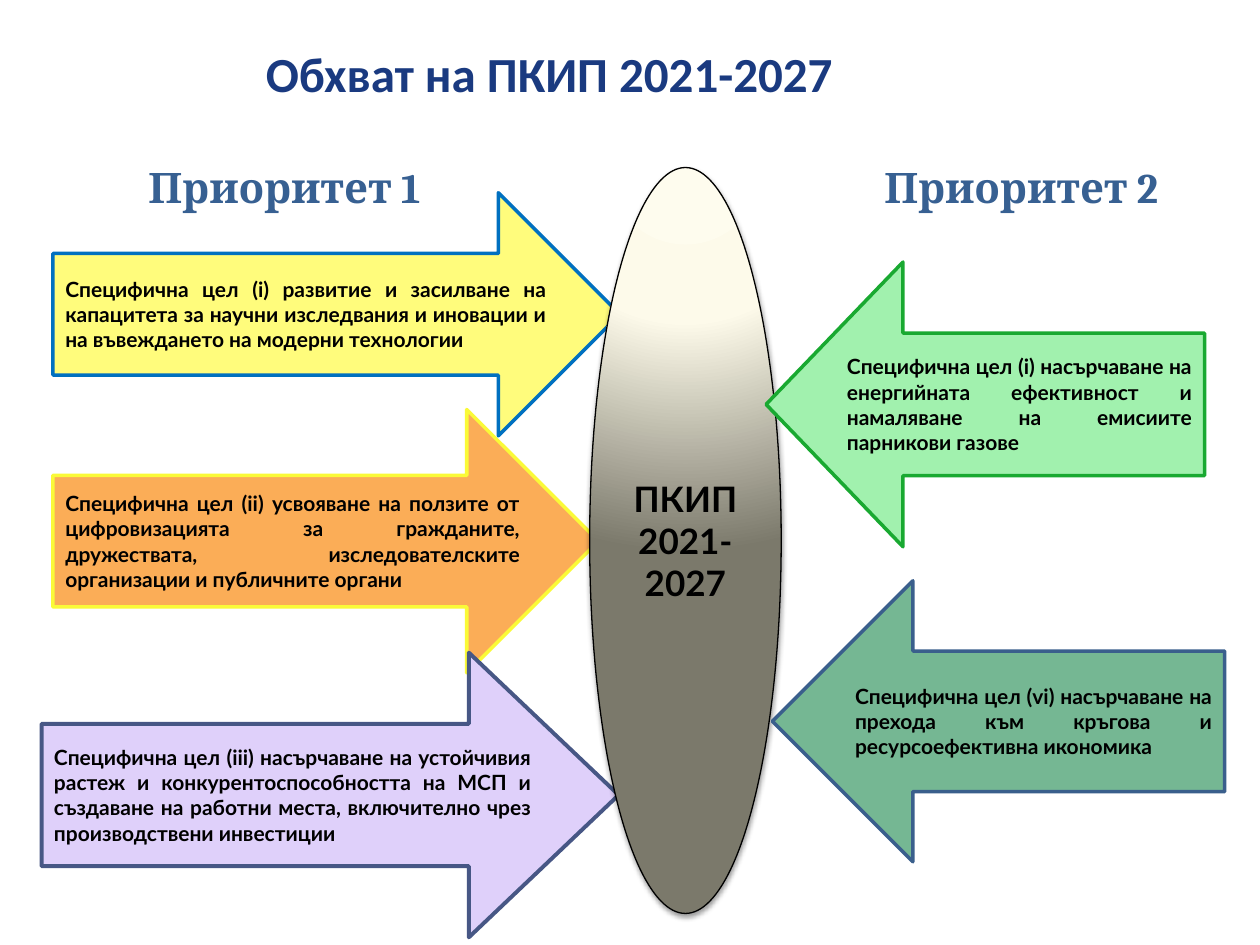
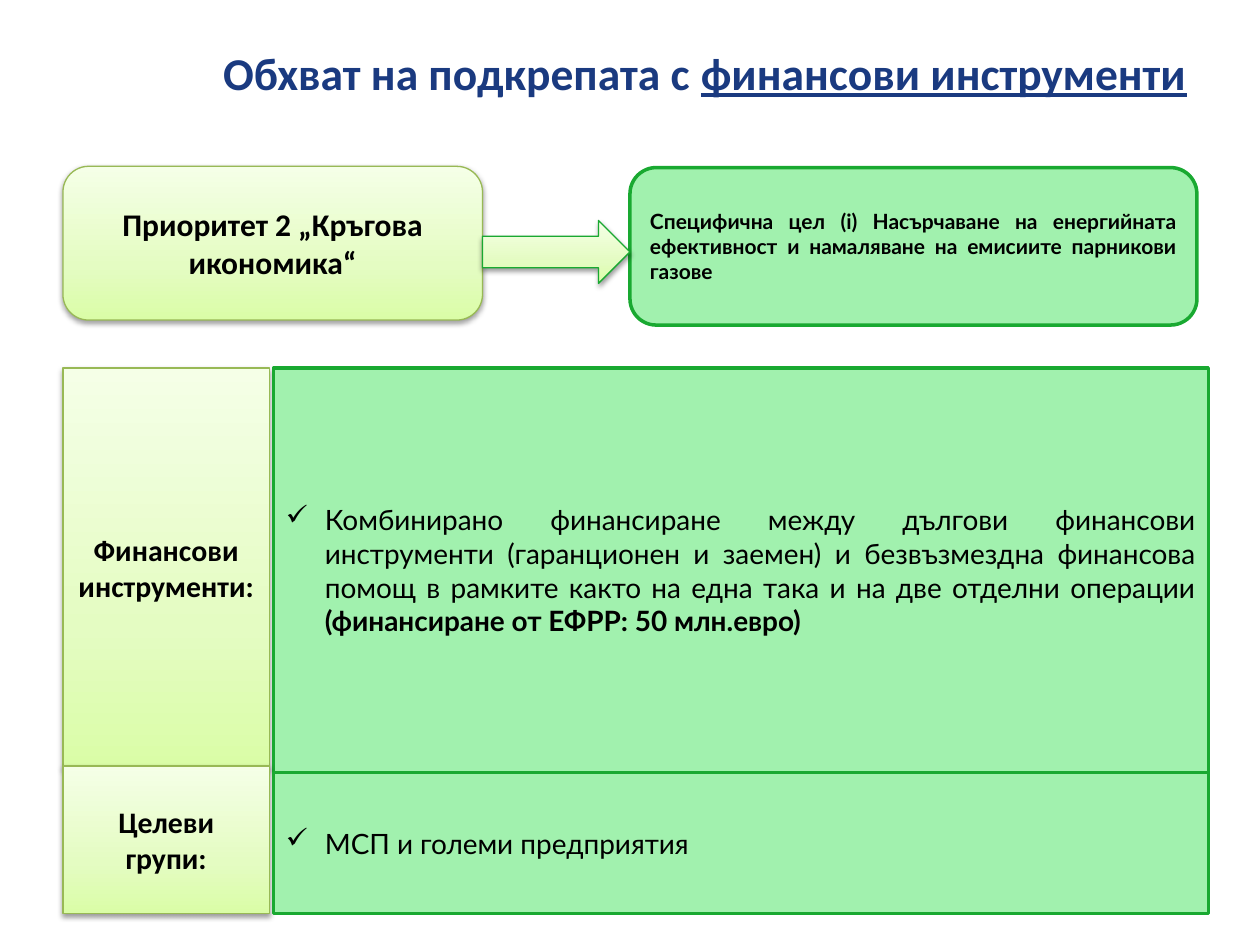
from dataclasses import dataclass
from lxml import etree
from pptx import Presentation, util as u
from pptx.dml.color import RGBColor
from pptx.enum import shapes, text
from pptx.oxml import ns

SHAPE = shapes.MSO_SHAPE
ALIGN = text.PP_ALIGN


@dataclass(frozen=True)
class Theme:
    title_font: str = "Calibri"
    heading_font: str = "Cambria"
    body_font: str = "Lato"
    title_color: str = "1A3A80"
    heading_color: str = "376092"
    ink: str = "000000"
    goal_fill: str = "A1F1AE"
    goal_line: str = "19A931"
    label_line: str = "98B955"
    label_stops: tuple = ((0, "DAFDA7"), (35, "E4FCC2"), (100, "F5FFE7"))
    core_stops: tuple = ((0, "FEFCEE"), (40, "FDFAEA"), (100, "7B796B"))
    heading_size: int = 24
    core_size: int = 20
    priority_size: int = 18
    label_size: int = 17
    list_size: int = 16
    goal_size: int = 12
    thin: float = 0.75
    thick: float = 2


class Deck:
    COLUMNS, ROWS = 100, 75

    def __init__(self, theme):
        self.theme = theme
        self.show = Presentation()
        self.show.slide_width, self.show.slide_height = u.Inches(10), u.Inches(7.5)
        self.slide = None

    def box(self, column, row, columns, rows):
        across = self.show.slide_width / self.COLUMNS
        down = self.show.slide_height / self.ROWS
        return [round(v) for v in (column * across, row * down, columns * across, rows * down)]

    def style(self, run, font, size, color, bold=True):
        run.font.name, run.font.size, run.font.bold = font, u.Pt(size), bold
        run.font.color.rgb = RGBColor.from_string(color)

    def new_slide(self, column, size, *parts):
        self.slide = self.show.slides.add_slide(self.show.slide_layouts[5])
        title = self.slide.shapes.title
        title.left, title.top, title.width, title.height = self.box(column, 0, 98.8 - column, 11.5)
        frame = title.text_frame
        frame.auto_size = text.MSO_AUTO_SIZE.NONE
        frame.vertical_anchor = text.MSO_ANCHOR.MIDDLE
        paragraph = frame.paragraphs[0]
        paragraph.alignment = ALIGN.LEFT
        for index, part in enumerate(parts):
            run = paragraph.add_run()
            run.text = part
            self.style(run, self.theme.title_font, size, self.theme.title_color)
            run.font.underline = index > 0

    def heading(self, place, words):
        heading = self.slide.shapes.add_textbox(*self.box(*place))
        frame = heading.text_frame
        frame.word_wrap = True
        frame.auto_size = text.MSO_AUTO_SIZE.SHAPE_TO_FIT_TEXT
        frame.text = words
        self.style(frame.paragraphs[0].runs[0], self.theme.heading_font,
                   self.theme.heading_size, self.theme.heading_color)

    def panel(self, kind, place, fill, line, width, adjust=None):
        panel = self.slide.shapes.add_shape(kind, *self.box(*place))
        panel.shadow.inherit = False
        panel.fill.solid()
        panel.fill.fore_color.rgb = RGBColor.from_string(fill)
        panel.line.color.rgb = RGBColor.from_string(line)
        panel.line.width = u.Pt(width)
        if adjust:
            panel.adjustments[1] = adjust
        return panel

    def shaded(self, kind, place, stops, line, radial=False):
        panel = self.panel(kind, place, stops[0][1], line, self.theme.thin)
        properties = panel._element.spPr
        listed = "".join(f'<a:gs pos="{at * 1000}"><a:srgbClr val="{color}"/></a:gs>'
                         for at, color in stops)
        course = ('<a:path path="circle"><a:fillToRect l="50000" t="-80000" r="50000" b="180000"/></a:path>'
                  if radial else '<a:lin ang="16200000" scaled="1"/>')
        gradient = etree.fromstring(
            f'<a:gradFill {ns.nsdecls("a")} rotWithShape="1"><a:gsLst>{listed}</a:gsLst>{course}</a:gradFill>')
        properties.replace(properties.find(ns.qn("a:solidFill")), gradient)
        shadow = etree.SubElement(properties.find(ns.qn("a:effectLst")), ns.qn("a:outerShdw"),
                                  blurRad=str(u.Pt(3.1)), dist=str(u.Pt(1.6)),
                                  dir="5400000", rotWithShape="0")
        color = etree.SubElement(shadow, ns.qn("a:srgbClr"), val=self.theme.ink)
        etree.SubElement(color, ns.qn("a:alpha"), val="38000")
        return panel

    def caption(self, panel, words, font, size, align=ALIGN.CENTER):
        frame = panel.text_frame
        frame.word_wrap = True
        frame.vertical_anchor = text.MSO_ANCHOR.MIDDLE
        frame.text = words
        paragraph = frame.paragraphs[0]
        paragraph.alignment = align
        self.style(paragraph.runs[0], font, size, self.theme.ink)
        return paragraph

    def goal(self, kind, place, words, fill, line, width=None, adjust=None):
        panel = self.panel(kind, place, fill, line, width or self.theme.thick, adjust)
        self.caption(panel, words, self.theme.body_font, self.theme.goal_size, ALIGN.JUSTIFY)

    def label(self, kind, place, words, size):
        panel = self.shaded(kind, place, self.theme.label_stops, self.theme.label_line)
        self.caption(panel, words, self.theme.title_font, size)

    def checklist(self, place, words, stress=""):
        theme = self.theme
        panel = self.panel(SHAPE.RECTANGLE, place, theme.goal_fill, theme.goal_line, theme.thick)
        paragraph = self.caption(panel, words, theme.body_font, theme.list_size, ALIGN.JUSTIFY)
        paragraph.runs[0].font.bold = False
        indent = u.Inches(0.31)
        properties = paragraph._p.get_or_add_pPr()
        properties.set("marL", str(indent))
        properties.set("indent", str(-indent))
        etree.SubElement(properties, ns.qn("a:buChar"), char="✓")
        if stress:
            run = paragraph.add_run()
            run.text = stress
            self.style(run, theme.body_font, theme.list_size, theme.ink)


def scope_slide(deck):
    theme = deck.theme
    deck.new_slide(20.1, 28, "Обхват на ПКИП 2021-2027")
    research_goals = (
        ((4.2, 15.3, 45, 19.3), "Специфична цел (i) развитие и засилване на капацитета за научни "
         "изследвания и иновации и на въвеждането на модерни технологии", "FFFC7C", "0070C0"),
        ((4.2, 32.5, 43.3, 20.9), "Специфична цел (ii) усвояване на ползите от цифровизацията за "
         "гражданите, дружествата, изследователските организации и публичните органи",
         "FBAD57", "FAFA38"),
        ((3.3, 51.8, 45.8, 22.6), "Специфична цел (iii) насърчаване на устойчивия растеж и "
         "конкурентоспособността на МСП и създаване на работни места, включително чрез "
         "производствени инвестиции", "DFD0FA", "475785", 2.25, 0.526),
    )
    circular_goals = (
        ((60.8, 20.8, 34.8, 22.6), "Специфична цел (i) насърчаване на енергийната ефективност и "
         "намаляване на емисиите парникови газове", theme.goal_fill, theme.goal_line, None, 0.481),
        ((61.3, 46.1, 35.9, 22.3), "Специфична цел (vi) насърчаване на прехода към кръгова и "
         "ресурсоефективна икономика", "75B793", "3A5F8C"),
    )
    for goal in research_goals:
        deck.goal(SHAPE.RIGHT_ARROW, *goal)
    programme = deck.shaded(SHAPE.OVAL, (46.8, 13.3, 15.2, 59.2), theme.core_stops, theme.ink, True)
    deck.caption(programme, "ПКИП 2021-2027", theme.body_font, theme.core_size)
    for goal in circular_goals:
        deck.goal(SHAPE.LEFT_ARROW, *goal)
    for number, column in enumerate((10.8, 69.2), 1):
        deck.heading((column, 12.3, 25.3, 5), f"Приоритет {number}")


def instruments_slide(deck):
    theme = deck.theme
    deck.new_slide(16.7, 26, "Обхват на подкрепата с ", "финансови инструменти")
    left, list_left, label_width, list_width, bottom = 5, 21.7, 16.4, 74.2, 72.5
    deck.label(SHAPE.ROUNDED_RECTANGLE, (left, 13.2, 33.3, 12.2),
               "Приоритет 2 „Кръгова икономика“", theme.priority_size)
    deck.goal(SHAPE.ROUNDED_RECTANGLE, (50, 13.3, 45, 12.5),
              "Специфична цел (i) Насърчаване на енергийната ефективност и намаляване на "
              "емисиите парникови газове", theme.goal_fill, theme.goal_line)
    deck.shaded(SHAPE.RIGHT_ARROW, (38.3, 17.5, 11.7, 5), theme.label_stops, theme.goal_line)
    sections = (
        (29.2, 60.9, 61.3, "Финансови инструменти:",
         ("Комбинирано финансиране между дългови финансови инструменти (гаранционен и заемен) "
          "и безвъзмездна финансова помощ в рамките както на една така и на две отделни операции ",
          "(финансиране от ЕФРР: 50 млн.евро)")),
        (60.8, bottom, bottom, "Целеви групи:", ("МСП и големи предприятия",)),
    )
    list_top = sections[0][0]
    for top, label_end, list_end, name, items in sections:
        deck.label(SHAPE.RECTANGLE, (left, top, label_width, label_end - top), name, theme.label_size)
        deck.checklist((list_left, list_top, list_width, list_end - list_top), *items)
        list_top = list_end


def main():
    deck = Deck(Theme())
    scope_slide(deck)
    instruments_slide(deck)
    deck.show.save("out.pptx")


if __name__ == "__main__":
    main()
